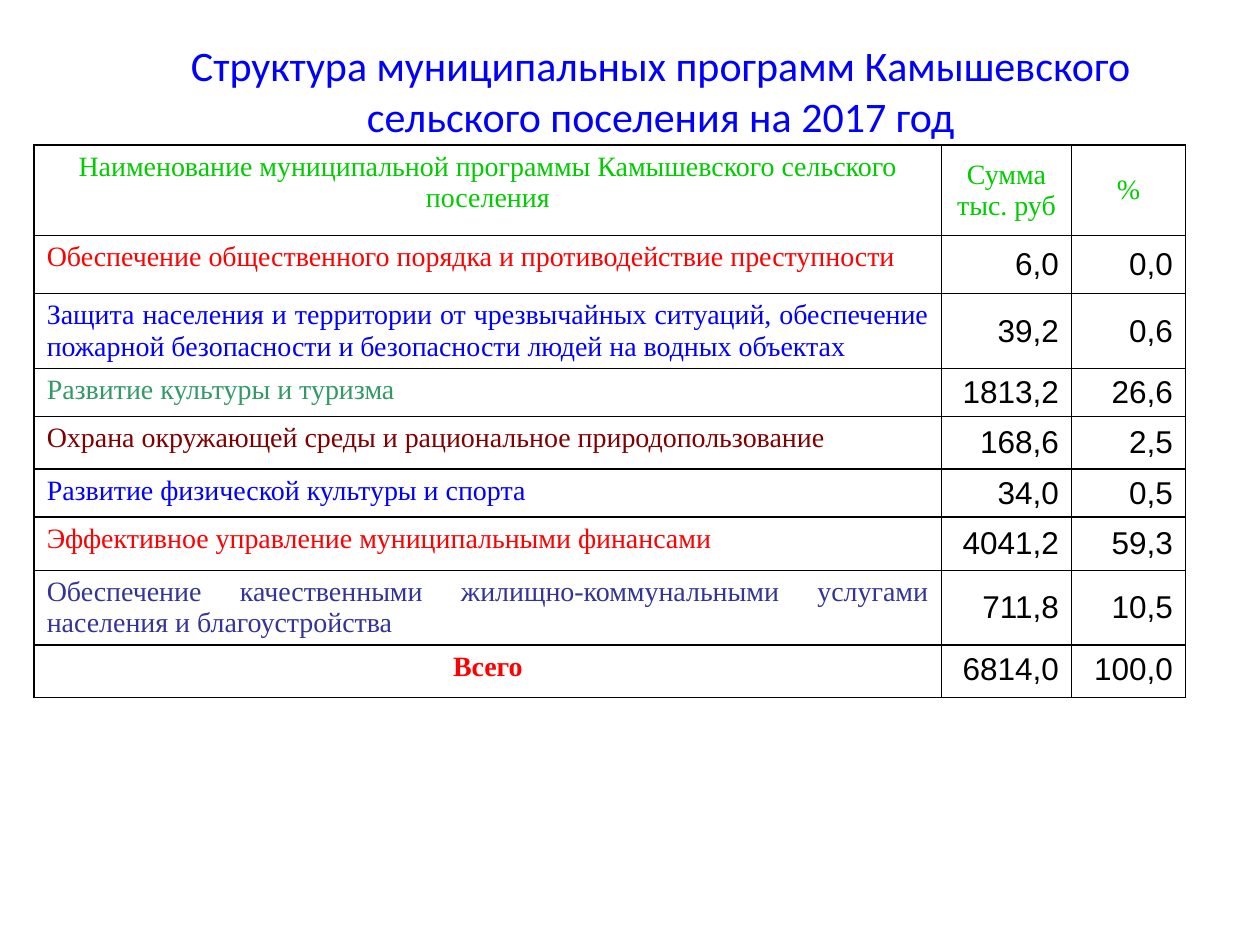
from lxml import etree
from pptx import Presentation
from pptx.dml.color import RGBColor
from pptx.enum import text
from pptx.oxml import ns
from pptx.util import Cm, Pt

AL, ANC = text.PP_ALIGN, text.MSO_ANCHOR
SERIF, SANS = "Times New Roman", "Arial"
HEADER = ["Наименование муниципальной программы Камышевского сельского поселения",
          "Сумма тыс. руб", "%"]
PROGRAMS = [
    ("Обеспечение общественного порядка и противодействие преступности",
     "6,0", "0,0", "FF0000", 1.17),
    ("Защита населения и территории от чрезвычайных ситуаций, обеспечение "
     "пожарной безопасности и безопасности людей на водных объектах",
     "39,2", "0,6", "0000FF", 1.51),
    ("Развитие культуры и туризма", "1813,2", "26,6", "339966", 0.96),
    ("Охрана окружающей среды и рациональное природопользование",
     "168,6", "2,5", "800000", 1.06),
    ("Развитие физической культуры и спорта", "34,0", "0,5", "0000FF", 0.97),
    ("Эффективное управление муниципальными финансами",
     "4041,2", "59,3", "FF0000", 1.07),
    ("Обеспечение качественными жилищно-коммунальными услугами населения "
     "и благоустройства", "711,8", "10,5", "333399", 1.5),
]
TOTAL = ["Всего", "6814,0", "100,0"]


def rgb(color):
    """Turn a hex string into a colour."""
    return RGBColor.from_string(color)


def format_text(tf, font, size, color, align, bold=False):
    """Format every run of a text frame."""
    for p in tf.paragraphs:
        p.alignment = align
        for r in p.runs:
            r.font.name, r.font.size, r.font.bold = font, Pt(size), bold
            r.font.color.rgb = rgb(color)


def add_borders(cell, color="000000", width=1):
    """Draw a solid line on all four sides of a cell."""
    tc_pr = cell._tc.get_or_add_tcPr()
    for i, side in enumerate(("lnL", "lnR", "lnT", "lnB")):
        ln = etree.Element(ns.qn(f"a:{side}"), w=str(Pt(width)))
        fill = etree.SubElement(ln, ns.qn("a:solidFill"))
        etree.SubElement(fill, ns.qn("a:srgbClr"), val=color)
        tc_pr.insert(i, ln)


def fill_cell(cell, value, font, size, color, align, anchor, bold=False):
    """Write one formatted, bordered cell."""
    cell.text = value
    cell.vertical_anchor = anchor
    cell.fill.background()
    format_text(cell.text_frame, font, size, color, align, bold)
    add_borders(cell)


def add_title(s, left, top, width, height):
    """Place the slide title in its box."""
    sp = s.shapes.title
    sp.left, sp.top, sp.width, sp.height = left, top, width, height
    tf = sp.text_frame
    tf.text = "Структура муниципальных программ Камышевского сельского поселения на 2017 год"
    tf.word_wrap = True
    tf.vertical_anchor = ANC.MIDDLE
    format_text(tf, "Calibri", 24, "0000FF", AL.CENTER)


def add_programs(s, left, top, width):
    """Place the table of programmes with its header and total."""
    heights = [1.83, *(program[4] for program in PROGRAMS), 1.06]
    table = s.shapes.add_table(len(heights), 3, left, top, width,
                               Cm(sum(heights))).table
    table.first_row = table.horz_banding = False
    amount, share = Cm(2.62), Cm(2.3)
    for column, w in zip(table.columns, (width - amount - share, amount, share)):
        column.width = w
    for row, h in zip(table.rows, heights):
        row.height = Cm(h)

    for j, value in enumerate(HEADER):
        fill_cell(table.cell(0, j), value, SERIF, 16, "00CC00", AL.CENTER,
                  ANC.MIDDLE if j else ANC.TOP)
    for i, (name, *values, color, _) in enumerate(PROGRAMS, 1):
        fill_cell(table.cell(i, 0), name, SERIF, 16, color, AL.JUSTIFY, ANC.TOP)
        for j, value in enumerate(values, 1):
            fill_cell(table.cell(i, j), value, SANS, 18, "000000", AL.RIGHT, ANC.MIDDLE)
    last = len(heights) - 1
    fill_cell(table.cell(last, 0), TOTAL[0], SERIF, 16, "FF0000", AL.CENTER, ANC.TOP, True)
    for j, value in enumerate(TOTAL[1:], 1):
        fill_cell(table.cell(last, j), value, SANS, 18, "000000", AL.RIGHT, ANC.TOP)


def main():
    """Build and save the slide."""
    prs = Presentation()
    prs.slide_width, prs.slide_height = Cm(25.4), Cm(19.05)
    s = prs.slides.add_slide(prs.slide_layouts[5])
    add_title(s, Cm(2.54), Cm(0.71), Cm(21.56), Cm(2.21))
    add_programs(s, Cm(0.69), Cm(2.92), Cm(23.21))
    prs.save("out.pptx")


if __name__ == "__main__":
    main()
